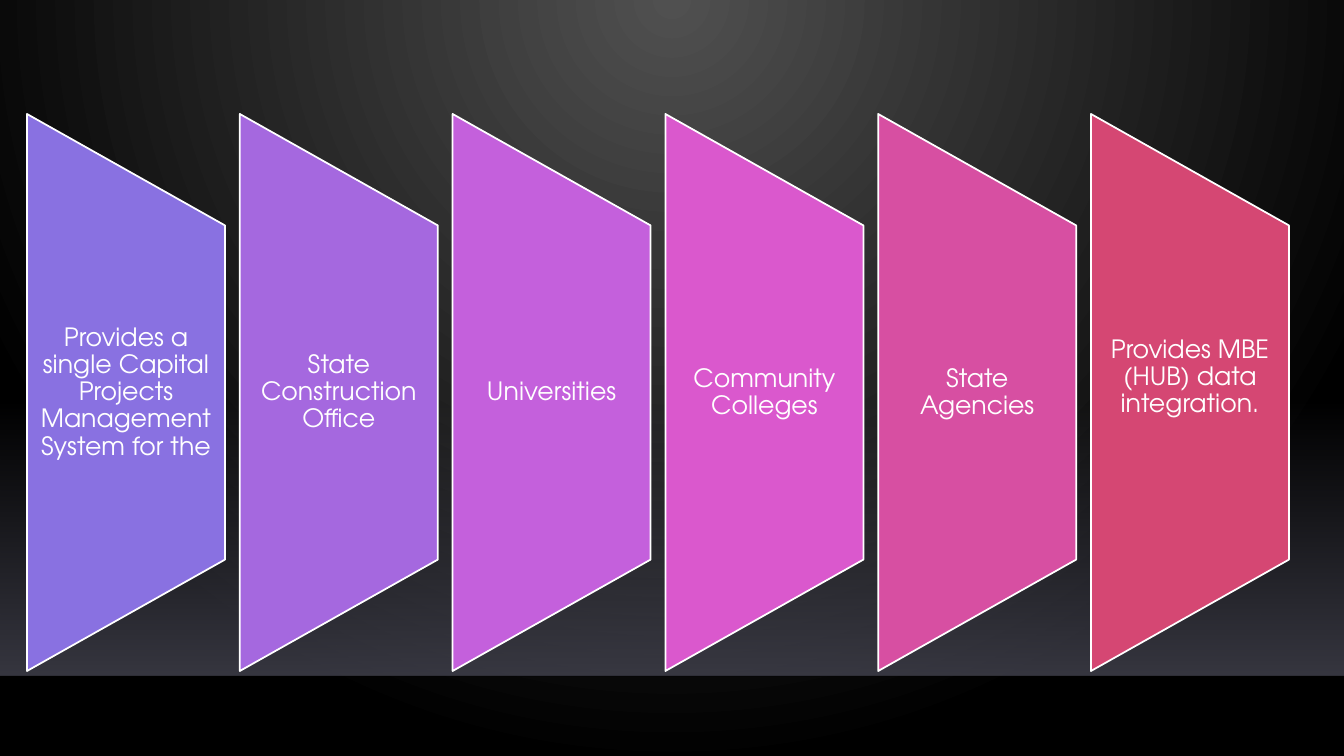
import pptx
import pptx.dml.color
import pptx.enum.shapes
import pptx.enum.text
import pptx.oxml.ns
import pptx.util
from lxml import etree

RGBColor = pptx.dml.color.RGBColor
SHAPES = pptx.enum.shapes.MSO_SHAPE
qn = pptx.oxml.ns.qn

WIDTH, HEIGHT = 1344, 756
EMU_PER_PX = 914400 / 100.8
FONT = "TeX Gyre Adventor"

WHITE = RGBColor(0xFF, 0xFF, 0xFF)
BLACK = RGBColor(0x00, 0x00, 0x00)
GLOW_GREY = RGBColor(0x50, 0x50, 0x50)
FLOOR_GREY = RGBColor(0x45, 0x45, 0x51)

PANELS = [
    ("Provides a single Capital Projects Management System for the",
     RGBColor(0x89, 0x71, 0xE1)),
    ("State Construction Office", RGBColor(0xA5, 0x68, 0xDF)),
    ("Universities", RGBColor(0xC4, 0x60, 0xDC)),
    ("Community Colleges", RGBColor(0xDA, 0x58, 0xCD)),
    ("State Agencies", RGBColor(0xD7, 0x4F, 0xA2)),
    ("Provides MBE (HUB) data integration.", RGBColor(0xD5, 0x47, 0x73)),
]
LAST_PANEL_LIFT = 30


def px(length):
    return pptx.util.Emu(round(length * EMU_PER_PX))


def set_opacity(color_element, percent):
    alpha = etree.SubElement(color_element, qn("a:alpha"))
    alpha.set("val", str(percent * 1000))


def set_stops(fill, colors):
    fill.gradient()
    for stop, color in zip(fill.gradient_stops, colors):
        stop.color.rgb = color


def paint_background(page):
    """Round glow from the middle of the top edge."""
    set_stops(page.background.fill, (GLOW_GREY, BLACK))
    gradient = page._element.find(".//" + qn("a:gradFill"))
    gradient.remove(gradient.find(qn("a:lin")))
    glow = etree.SubElement(gradient, qn("a:path"), {"path": "circle"})
    etree.SubElement(glow, qn("a:fillToRect"),
                     {"l": "43000", "t": "0", "r": "43000", "b": "100000"})


def add_floor(page, left, top, width, height):
    """Band that fades in downwards, closed by a faint line."""
    band = page.shapes.add_shape(SHAPES.RECTANGLE, px(left), px(top),
                                 px(width), px(height))
    band.shadow.inherit = False
    band.line.fill.background()
    set_stops(band.fill, (FLOOR_GREY, FLOOR_GREY))
    band.fill.gradient_angle = 270
    stops = band._element.spPr.iter(qn("a:srgbClr"))
    for color, opacity in zip(list(stops), (0, 80)):
        set_opacity(color, opacity)

    edge = page.shapes.add_connector(
        pptx.enum.shapes.MSO_CONNECTOR.STRAIGHT,
        px(left), px(top + height), px(left + width), px(top + height))
    edge.line.color.rgb = BLACK
    edge.line.width = pptx.util.Pt(1)
    properties = edge._element.spPr
    set_opacity(properties.find(".//" + qn("a:srgbClr")), 20)
    etree.SubElement(properties, qn("a:effectLst"))


def add_panel(group, left, top, width, height, text, color, lift):
    """Trapezoid lying on its side, with a label in its middle part."""
    # The outline is placed unrotated, around the centre of the panel
    panel = group.shapes.add_shape(
        SHAPES.FLOWCHART_MANUAL_OPERATION,
        px(left + (width - height) / 2), px(top + (height - width) / 2),
        px(height), px(width))
    panel.rotation = 270
    panel.shadow.inherit = False
    panel.fill.solid()
    panel.fill.fore_color.rgb = color
    panel.line.color.rgb = WHITE
    panel.line.width = pptx.util.Pt(1.25)

    # The label fills the three middle fifths
    label = group.shapes.add_textbox(px(left), px(top + height / 5),
                                     px(width), px(height * 3 / 5))
    frame = label.text_frame
    frame.word_wrap = True
    frame.vertical_anchor = pptx.enum.text.MSO_ANCHOR.MIDDLE
    frame.margin_left = frame.margin_right = px(12)
    frame.margin_top = 0
    frame.margin_bottom = px(lift)
    frame.text = text
    para = frame.paragraphs[0]
    para.alignment = pptx.enum.text.PP_ALIGN.CENTER
    para.line_spacing = 0.9
    para.font.size = pptx.util.Pt(18)
    for span in para.runs:
        span.font.name = FONT
        span.font.size = pptx.util.Pt(18)
        span.font.color.rgb = WHITE


def add_panel_row(page, left, top, width, height, panel_width):
    pitch = (width - panel_width) / (len(PANELS) - 1)
    group = page.shapes.add_group_shape()
    for index, (text, color) in enumerate(PANELS):
        lift = LAST_PANEL_LIFT if index == len(PANELS) - 1 else 0
        add_panel(group, left + index * pitch, top, panel_width, height,
                  text, color, lift)


def main():
    deck = pptx.Presentation()
    deck.slide_width, deck.slide_height = px(WIDTH), px(HEIGHT)
    page = deck.slides.add_slide(deck.slide_layouts[6])
    paint_background(page)
    add_floor(page, 0, 399, WIDTH, 277)
    add_panel_row(page, 27, 114, 1262, 557, panel_width=198)
    deck.save("out.pptx")


if __name__ == "__main__":
    main()
